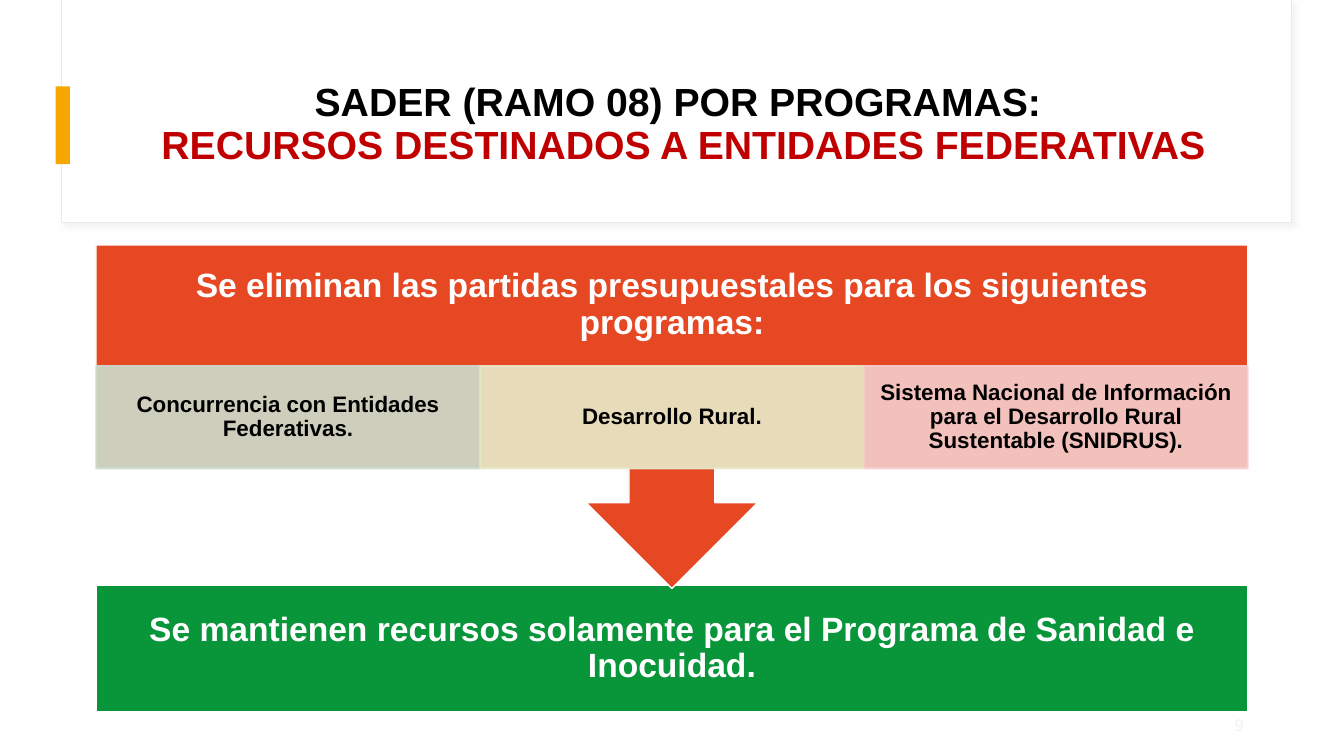
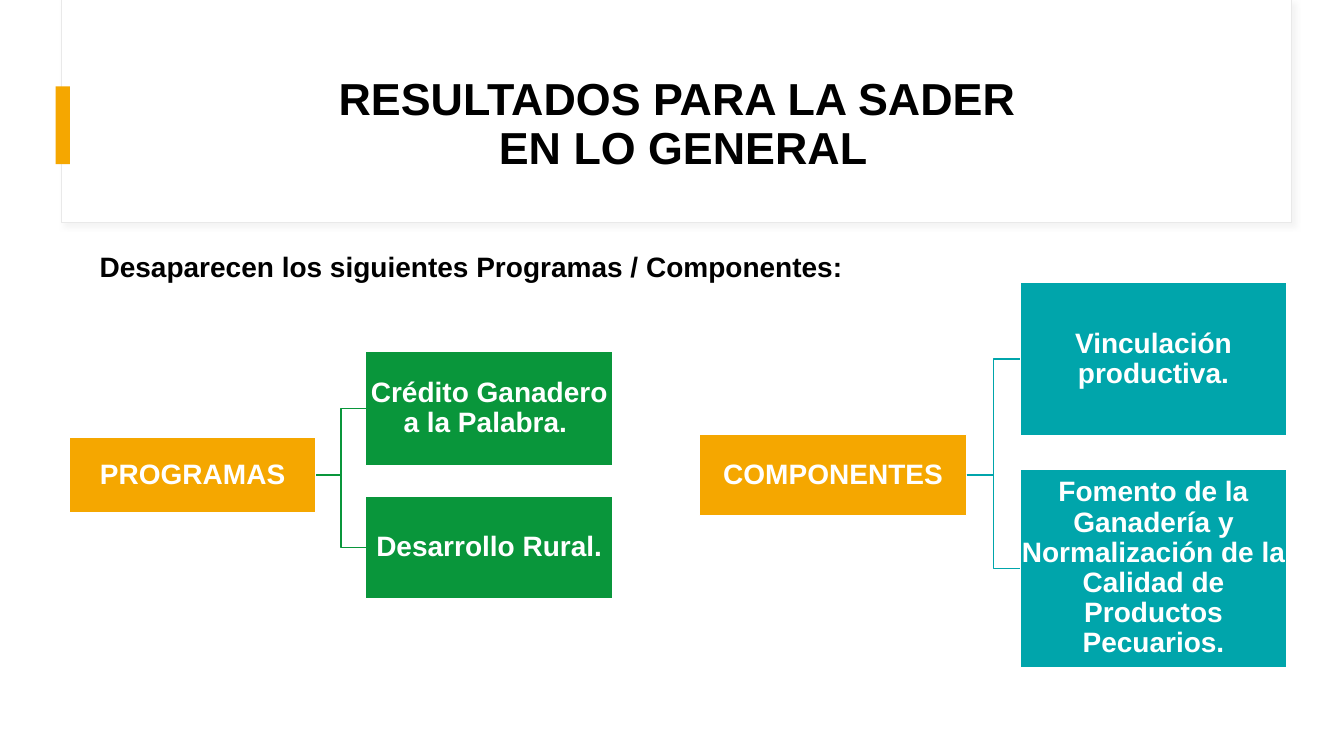
import pptx
import pptx.dml.color
import pptx.enum.shapes
import pptx.enum.text
import pptx.oxml.ns
import pptx.util
from lxml import etree

Cm, Pt = pptx.util.Cm, pptx.util.Pt
SHAPE = pptx.enum.shapes.MSO_SHAPE
ALIGN = pptx.enum.text.PP_ALIGN
ANCHOR = pptx.enum.text.MSO_ANCHOR

# Shared style
FONT = "Arial"
BLACK, WHITE, RED = "000000", "FFFFFF", "C00000"
AMBER, ORANGE, GREEN, TEAL = "F5A700", "E64823", "09963B", "00A5AB"
PANEL_LINE, SHADOW, PALE = "E9E9E9", "D9D9D9", "F2F2F2"

# Content
CUTS_TITLE = [("SADER (RAMO 08) POR PROGRAMAS: ", BLACK),
              ("RECURSOS DESTINADOS A ENTIDADES FEDERATIVAS", RED)]
CUTS_HEADING = "Se eliminan las partidas presupuestales para los siguientes programas:"
CUT_PROGRAMS = [
    ("Concurrencia con Entidades Federativas.", "CCDDCE"),
    ("Desarrollo Rural.", "E8EBCB"),
    ("Sistema Nacional de Información para el Desarrollo Rural Sustentable (SNIDRUS).", "F5CFCD"),
]
KEPT = "Se mantienen recursos solamente para el Programa de Sanidad e Inocuidad."

RESULTS_TITLE = [("RESULTADOS PARA LA SADER ", BLACK), ("EN LO GENERAL", BLACK)]
RESULTS_INTRO = "Desaparecen los siguientes Programas / Componentes:"
TREES = [
    {"root": "PROGRAMAS", "left": 1.74, "width": 6.23, "color": GREEN,
     "children": [("Crédito Ganadero a la Palabra. ", 2.87), ("Desarrollo Rural.", 2.57)]},
    {"root": "COMPONENTES", "left": 17.63, "width": 6.73, "color": TEAL,
     "children": [("Vinculación productiva.", 3.86),
                  ("Fomento de la Ganadería y Normalización de la Calidad de "
                   "Productos Pecuarios.", 5.0)]},
]
TREE_MIDDLE = 11.97


def rgb(color):
    return pptx.dml.color.RGBColor.from_string(color)


def add_xml(parent, tag, **attributes):
    return etree.SubElement(parent, pptx.oxml.ns.qn(tag), attributes)


def write(shape, lines, size, align=ALIGN.CENTER, anchor=ANCHOR.MIDDLE,
          insets=None, spacing=0.9):
    """Write (text, color) lines as one paragraph; insets are left/right, top, bottom."""
    frame = shape.text_frame
    frame.word_wrap = True
    frame.vertical_anchor = anchor
    if insets:
        side, top, bottom = insets
        frame.margin_left = frame.margin_right = Cm(side)
        frame.margin_top, frame.margin_bottom = Cm(top), Cm(bottom)
    paragraph = frame.paragraphs[0]
    paragraph.alignment = align
    paragraph.line_spacing = spacing
    for index, (text, color) in enumerate(lines):
        if index:
            paragraph.add_line_break()
        run = paragraph.add_run()
        run.text = text
        run.font.name, run.font.size, run.font.bold = FONT, Pt(size), True
        run.font.color.rgb = rgb(color)
    return paragraph


def add_box(slide, at, fill, line=WHITE, line_width=1, kind=SHAPE.RECTANGLE):
    shape = slide.shapes.add_shape(kind, *map(Cm, at))
    shape.shadow.inherit = False
    shape.fill.solid()
    shape.fill.fore_color.rgb = rgb(fill)
    if line:
        shape.line.color.rgb = rgb(line)
        shape.line.width = Pt(line_width)
    else:
        shape.line.fill.background()
    return shape


def add_text(slide, at, lines, size, **style):
    return write(slide.shapes.add_textbox(*map(Cm, at)), lines, size, **style)


def set_opacity(shape, percent):
    for color in shape._element.spPr.findall(".//" + pptx.oxml.ns.qn("a:srgbClr")):
        add_xml(color, "a:alpha", val=str(percent * 1000))


def add_branch(slide, root, child, color):
    branch = slide.shapes.add_connector(pptx.enum.shapes.MSO_CONNECTOR.ELBOW, 0, 0, 0, 0)
    branch.begin_connect(root, 3)
    branch.end_connect(child, 1)
    branch.line.color.rgb = rgb(color)
    branch.line.width = Pt(1)
    add_xml(branch._element.spPr, "a:effectLst")


def add_slide(presentation, title, title_size):
    slide = presentation.slides.add_slide(presentation.slide_layouts[6])
    # Title panel with soft shadow, and accent bar
    panel = add_box(slide, (1.55, 0, 31.01, 5.61), WHITE, PANEL_LINE, 0.75)
    effects = panel._element.spPr.find(pptx.oxml.ns.qn("a:effectLst"))
    shadow = add_xml(effects, "a:outerShdw", blurRad=str(Pt(4)), dist=str(Pt(3)),
                     dir=str(45 * 60000), algn="tl", rotWithShape="0")
    add_xml(add_xml(shadow, "a:srgbClr", val=SHADOW), "a:alpha", val="30000")
    add_box(slide, (1.4, 2.18, 0.36, 1.96), AMBER, None)
    add_text(slide, (3.1, 1.52, 28.24, 3.28), title, title_size)
    return slide


def build_cuts(presentation):
    slide = add_slide(presentation, CUTS_TITLE, 28)
    left, width = 2.42, 29.03
    cell_top, cell_height = 9.22, 2.59

    # Kept programme, below the arrow
    kept = add_box(slide, (left, 14.76, width, 3.17), GREEN)
    write(kept, [(KEPT, WHITE)], 24, insets=(0.48, 0.48, 0.48))

    # Heading with arrow; its text stays above the cells
    callout = add_box(slide, (left, 6.17, width, 8.66), ORANGE, kind=SHAPE.DOWN_ARROW_CALLOUT)
    write(callout, [(CUTS_HEADING, WHITE)], 24, insets=(0.48, 0.48, 0.48 + cell_height))

    # Removed programmes
    cell_width = width / len(CUT_PROGRAMS)
    for index, (text, color) in enumerate(CUT_PROGRAMS):
        cell = add_box(slide, (left + index * cell_width, cell_top, cell_width, cell_height),
                       color, color)
        set_opacity(cell, 90)
        write(cell, [(text, BLACK)], 16, insets=(0.3, 0.05, 0.05))

    # Page number
    number = add_text(slide, (29.5, 17.8, 2.1, 1), [("9", PALE)], 12, align=ALIGN.RIGHT)
    number.runs[0].font.bold = False


def add_tree(slide, root, left, width, color, children):
    insets = (0.03, 0.03, 0.03)
    root_height, column_gap, row_gap = 0.305 * width, 0.2 * width, 0.125 * width
    root_box = add_box(slide, (left, TREE_MIDDLE - root_height / 2, width, root_height), AMBER)
    write(root_box, [(root, WHITE)], 20, insets=insets)

    stack_height = sum(height for _, height in children) + row_gap * (len(children) - 1)
    top = TREE_MIDDLE - stack_height / 2
    for text, height in children:
        child = add_box(slide, (left + width + column_gap, top, width, height), color)
        write(child, [(text, WHITE)], 20, insets=insets)
        add_branch(slide, root_box, child, color)
        top += height + row_gap


def build_results(presentation):
    slide = add_slide(presentation, RESULTS_TITLE, 32)
    add_text(slide, (2.26, 6.15, 20.45, 1.12), [(RESULTS_INTRO, BLACK)], 20,
             align=ALIGN.LEFT, anchor=ANCHOR.TOP, spacing=1.0)
    for tree in TREES:
        add_tree(slide, **tree)


def main():
    presentation = pptx.Presentation()
    presentation.slide_width, presentation.slide_height = Cm(33.87), Cm(19.05)
    build_cuts(presentation)
    build_results(presentation)
    presentation.save("out.pptx")


if __name__ == "__main__":
    main()
